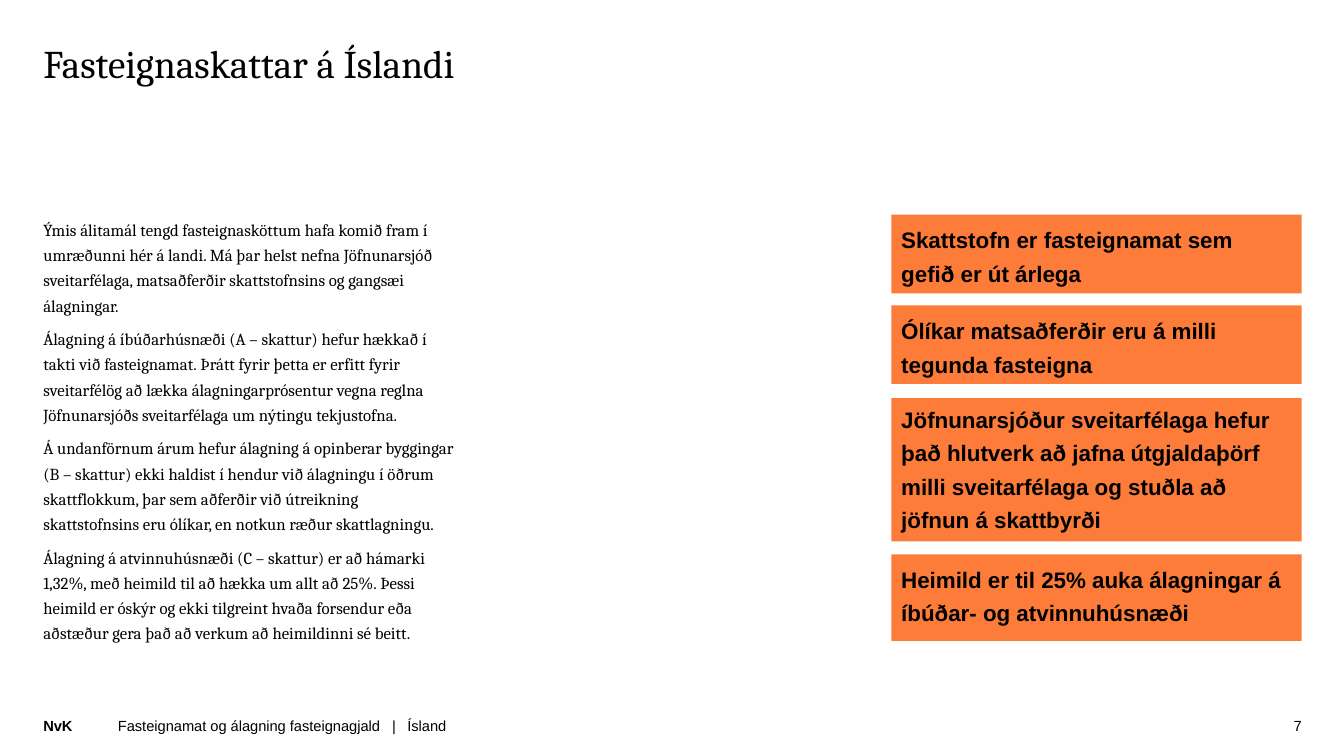
from dataclasses import dataclass
from lxml.etree import SubElement as Sub
from pptx import Presentation as Deck
from pptx.dml.color import RGBColor as Color
from pptx.enum.shapes import MSO_SHAPE as Shape
from pptx.enum.text import MSO_ANCHOR as Anchor, PP_ALIGN as Align
from pptx.oxml.ns import qn
from pptx.util import Inches, Pt


@dataclass(frozen=True)
class Theme:
    ink: Color = Color.from_string("000000")
    card: Color = Color.from_string("FE7C39")
    serif: str = "Cambria"
    sans: str = "Arial"
    head: Pt = Pt(28)
    body: Pt = Pt(12)
    note: Pt = Pt(16)
    foot: Pt = Pt(10.5)


def apply(item, form):
    for name, value in form.items():
        setattr(item, name, value)


class Page:
    def __init__(self, deck, theme):
        self.theme = theme
        self.slide = deck.slides.add_slide(deck.slide_layouts[6])

    def fill(self, shape, lines, font, para, pad, anchor=Anchor.TOP):
        frame = shape.text_frame
        sides = ("margin_left", "margin_top", "margin_right", "margin_bottom")
        apply(frame, {"word_wrap": True, "vertical_anchor": anchor})
        apply(frame, dict(zip(sides, map(Inches, pad))))
        for i, line in enumerate(lines):
            part = frame.add_paragraph() if i else frame.paragraphs[0]
            apply(part, {"alignment": Align.LEFT, **para})
            run = part.add_run()
            run.text = line
            apply(run.font, font)
            run.font.color.rgb = self.theme.ink
        return frame

    def text(self, box, lines, font, para=None, anchor=Anchor.TOP):
        shape = self.slide.shapes.add_textbox(*map(Inches, box))
        return self.fill(shape, lines, font, para or {}, (0, 0, 0, 0), anchor)

    def card(self, box, line, font, para, top):
        shape = self.slide.shapes.add_shape(Shape.RECTANGLE, *map(Inches, box))
        shape.shadow.inherit = False
        shape.fill.solid()
        shape.fill.fore_color.rgb = self.theme.card
        shape.line.fill.background()
        self.fill(shape, [line], font, para, (0.1, top, 0.1, 0.05))

    def tabs(self, frame, stops):
        props = frame.paragraphs[0]._p.get_or_add_pPr()
        group = Sub(props, qn("a:tabLst"))
        for stop in stops:
            Sub(group, qn("a:tab"), pos=str(Inches(stop)), algn="l")


BODY = [
    "Ýmis álitamál tengd fasteignasköttum hafa komið fram í umræðunni hér á landi. "
    "Má þar helst nefna Jöfnunarsjóð sveitarfélaga, matsaðferðir skattstofnsins og "
    "gangsæi álagningar.",
    "Álagning á íbúðarhúsnæði (A – skattur) hefur hækkað í takti við fasteignamat. "
    "Þrátt fyrir þetta er erfitt fyrir sveitarfélög að lækka álagningarprósentur "
    "vegna reglna Jöfnunarsjóðs sveitarfélaga um nýtingu tekjustofna.",
    "Á undanförnum árum hefur álagning á opinberar byggingar (B – skattur) ekki "
    "haldist í hendur við álagningu í öðrum skattflokkum, þar sem aðferðir við "
    "útreikning skattstofnsins eru ólíkar, en notkun ræður skattlagningu.",
    "Álagning á atvinnuhúsnæði (C – skattur) er að hámarki 1,32%, með heimild til "
    "að hækka um allt að 25%. Þessi heimild er óskýr og ekki tilgreint hvaða "
    "forsendur eða aðstæður gera það að verkum að heimildinni sé beitt.",
]
CARDS = [
    (2.13, 0.78, 0.05, "Skattstofn er fasteignamat sem gefið er út árlega"),
    (3.03, 0.78, 0.05, "Ólíkar matsaðferðir eru á milli tegunda fasteigna"),
    (3.95, 1.42, 0.01, "Jöfnunarsjóður sveitarfélaga hefur það hlutverk að jafna "
     "útgjaldaþörf milli sveitarfélaga og stuðla að jöfnun á skattbyrði"),
    (5.5, 0.86, 0.05, "Heimild er til 25% auka álagningar á íbúðar- og "
     "atvinnuhúsnæði"),
]


def main():
    deck = Deck()
    apply(deck, {"slide_width": Inches(13.33), "slide_height": Inches(7.5)})
    theme = Theme()
    page = Page(deck, theme)
    head = {"name": theme.serif, "size": theme.head}
    body = {"name": theme.serif, "size": theme.body}
    note = {"name": theme.sans, "size": theme.note, "bold": True}
    foot = {"name": theme.sans, "size": theme.foot}
    flow = {"line_spacing": 1.25, "space_before": Pt(6)}

    page.text((0.43, 0.44, 7.22, 1.42), ["Fasteignaskattar á Íslandi"], head,
              {"line_spacing": 0.9})
    page.text((0.43, 2.13, 4.08, 4.82), BODY, body, flow)
    for top, tall, pad, line in CARDS:
        page.card((8.84, top, 4.07, tall), line, note, flow, pad)

    page.text((0.43, 7.11, 0.47, 0.18), ["NvK"], {**foot, "bold": True})
    frame = page.text((1.17, 7.11, 9.64, 0.18),
                      ["Fasteignamat og álagning fasteignagjald\t|\tÍsland"],
                      foot, anchor=Anchor.BOTTOM)
    page.tabs(frame, (2.72, 2.87))
    page.text((12.58, 7.11, 0.33, 0.18), ["7"], foot,
              {"alignment": Align.RIGHT}, Anchor.BOTTOM)
    deck.save("out.pptx")


if __name__ == "__main__":
    main()
